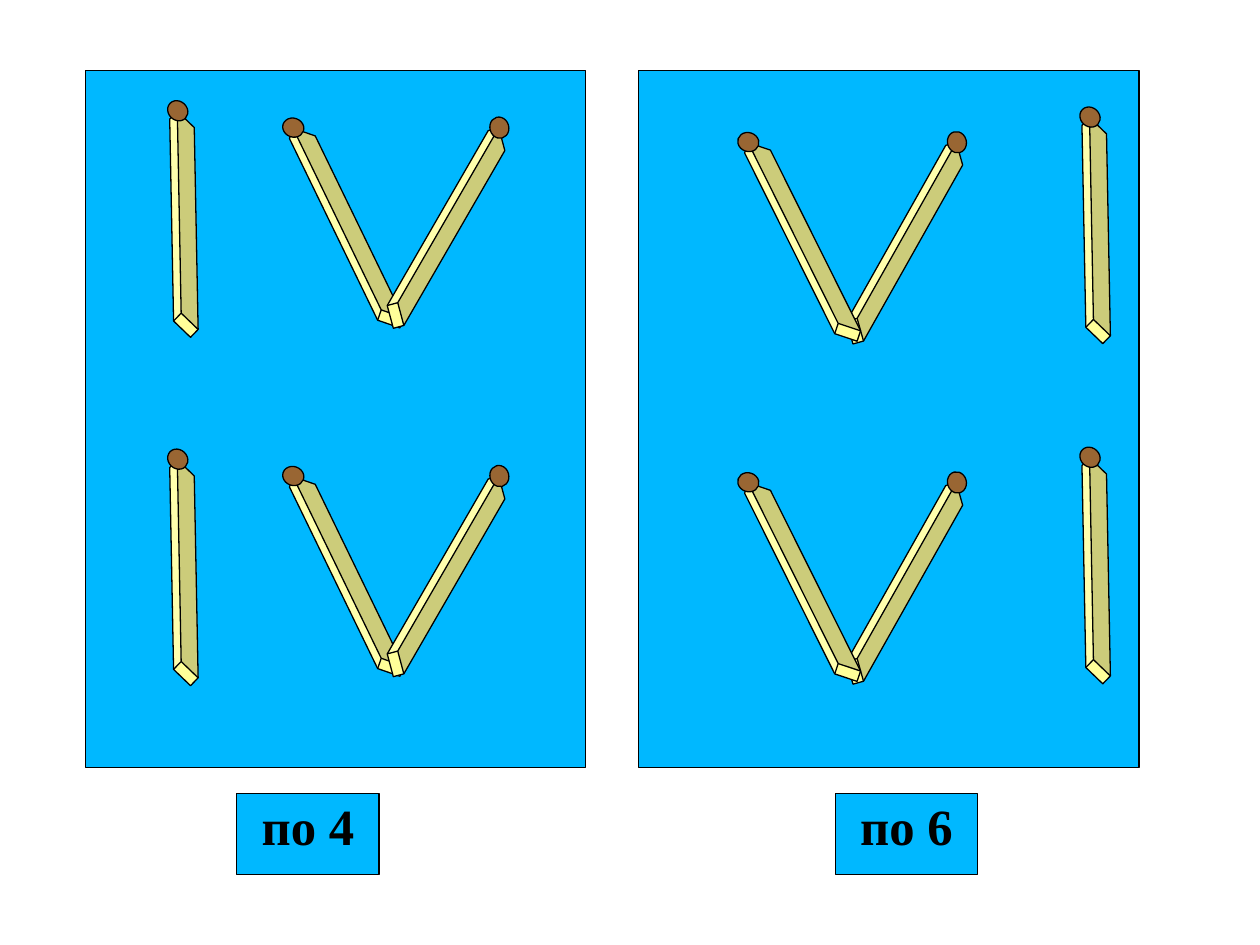
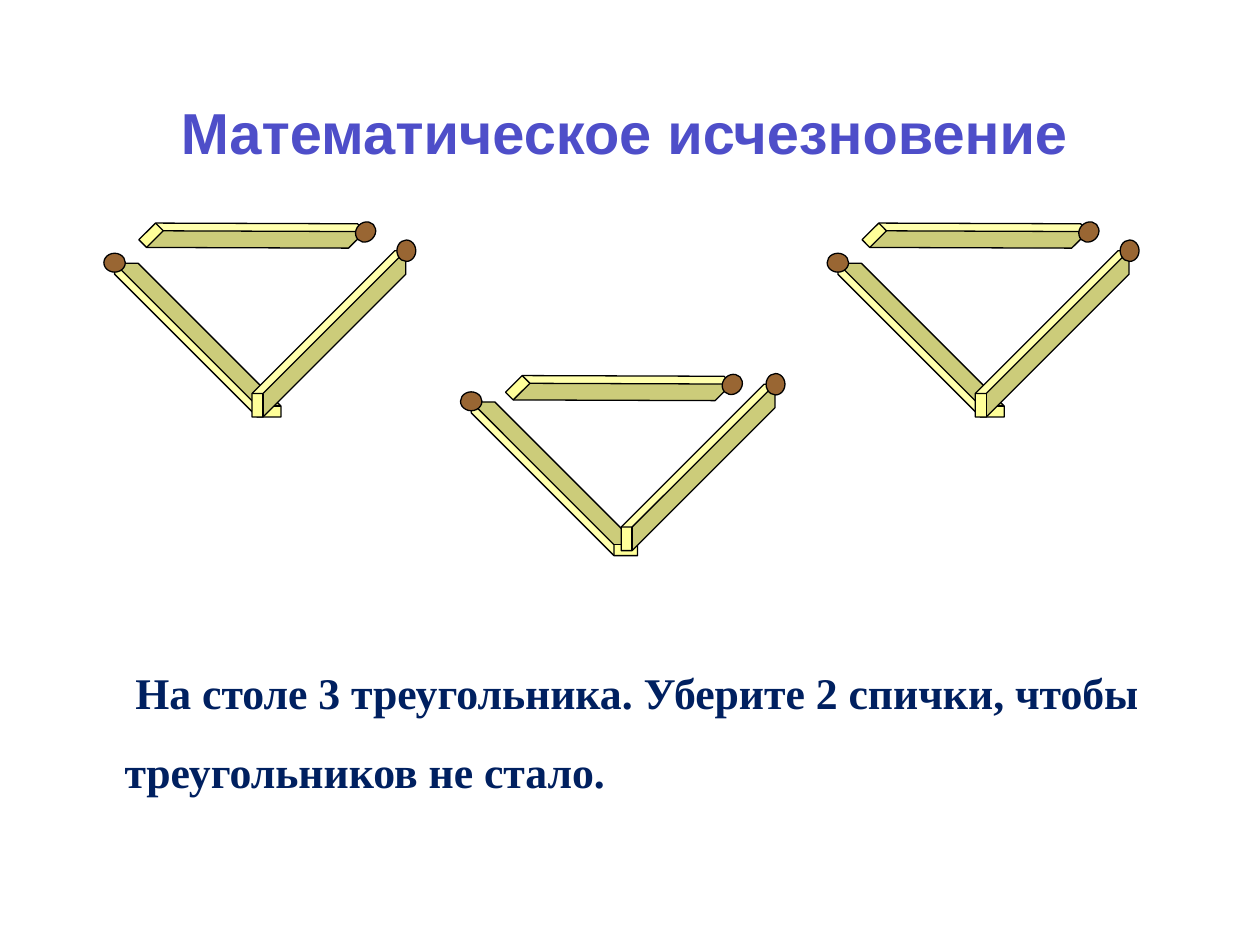
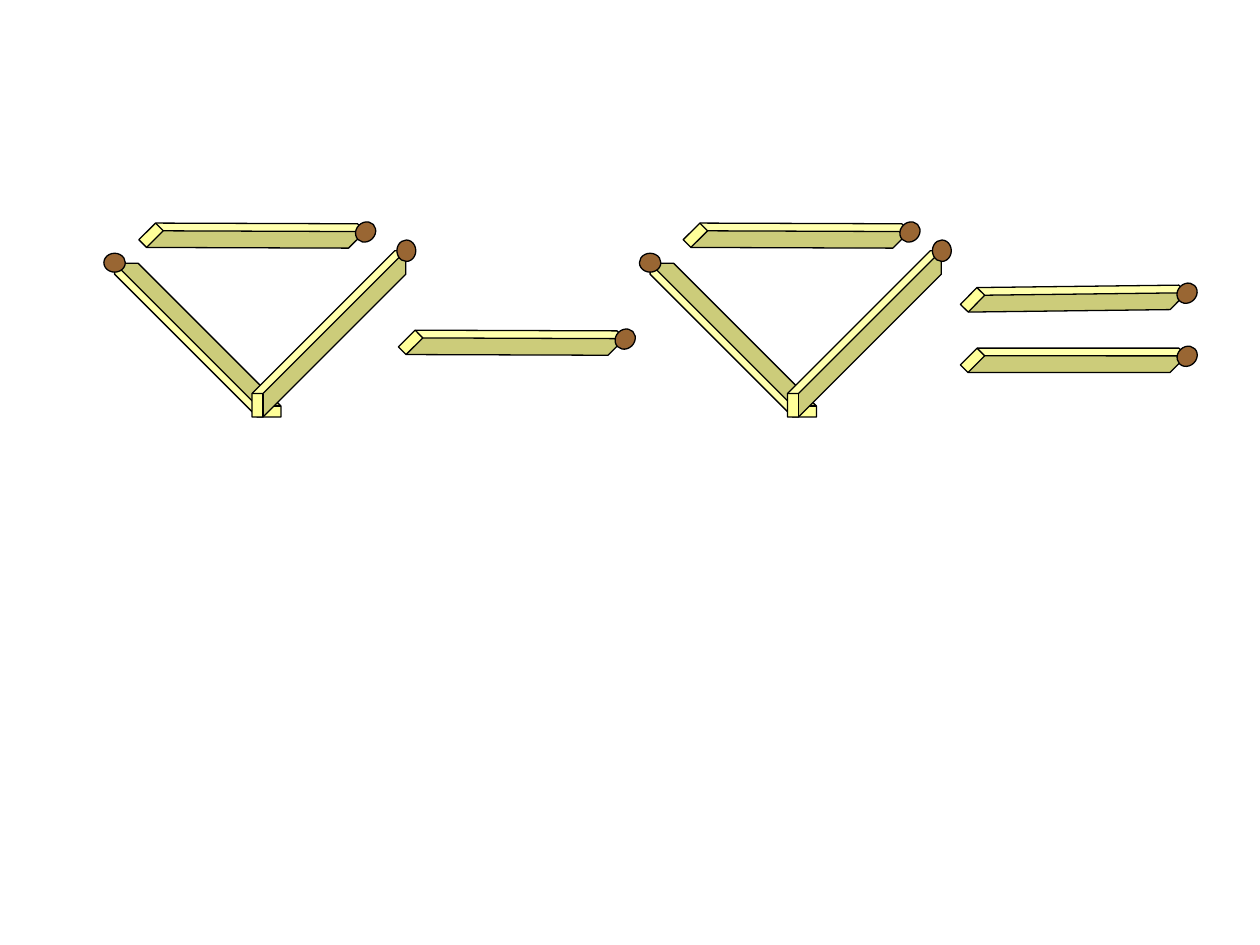
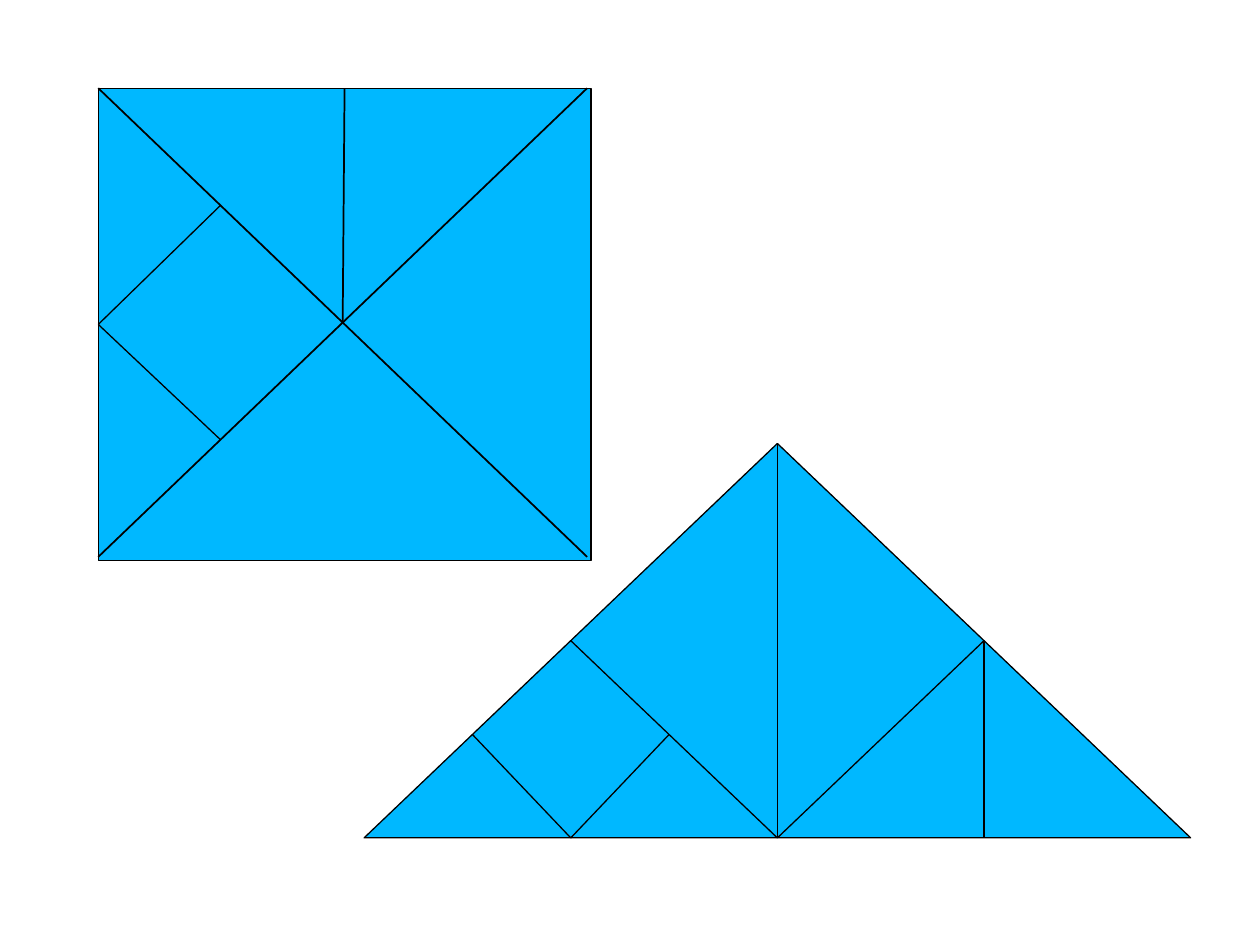
from math import cos, radians, sin

from lxml.etree import SubElement
from pptx import Presentation
from pptx.dml.color import RGBColor
from pptx.enum.shapes import MSO_CONNECTOR, MSO_SHAPE
from pptx.enum.text import MSO_ANCHOR, MSO_AUTO_SIZE, PP_ALIGN
from pptx.oxml import parse_xml
from pptx.oxml.ns import nsdecls, qn
from pptx.util import Inches, Pt

BLUE = "00B8FF"
BLACK = "000000"
WOOD = "FFFF99"
SULPHUR = "996633"
NAVY = "002060"
TITLE_STOPS = ((0, "5B5BCB"), (25, "4E4EC9"), (50, "2424B7"),
               (75, "4E4EC9"), (100, "5B5BCB"))

STICK_W, STICK_H = 1.22, 1.32
TIP_W, TIP_H = 0.15, 0.17
TIP_DX, TIP_DY = 0.615, -0.66

LEFT_FOUR = ((0.85, 1.12, 313.9), (2.14, 1.15, 289.1), (2.93, 1.15, 345))
RIGHT_SIX = ((8.09, 1.17, 313.9), (6.57, 1.27, 344.4), (5.76, 1.26, 288.5))
TOP_BAR = ((1.39, 1.21, 45.2),)
VEE = ((0.96, 2.04, 270), (2, 1.99, 0))


def color(value):
    return RGBColor.from_string(value)


def add_figure(shapes, kind, left, top, width, height, fill, rotation=0):
    figure = shapes.add_shape(kind, Inches(left), Inches(top),
                              Inches(width), Inches(height))
    figure.shadow.inherit = False
    figure.fill.solid()
    figure.fill.fore_color.rgb = color(fill)
    figure.line.color.rgb = color(BLACK)
    figure.line.width = Pt(0.75)
    figure.rotation = rotation
    return figure


def add_match(shapes, left, top, rotation):
    stick = add_figure(shapes, MSO_SHAPE.CUBE, left, top, STICK_W, STICK_H, WOOD, rotation)
    stick.adjustments[0] = 0.929
    turn = radians(rotation)
    tip_x = left + STICK_W / 2 + TIP_DX * cos(turn) - TIP_DY * sin(turn)
    tip_y = top + STICK_H / 2 + TIP_DX * sin(turn) + TIP_DY * cos(turn)
    add_figure(shapes, MSO_SHAPE.OVAL, tip_x - TIP_W / 2, tip_y - TIP_H / 2,
               TIP_W, TIP_H, SULPHUR, rotation)


def add_matches(slide, matches, dx=0, dy=0):
    group = slide.shapes.add_group_shape()
    for left, top, rotation in matches:
        add_match(group.shapes, left + dx, top + dy, rotation)


def add_cut(shapes, start, end, width=0.75):
    cut = shapes.add_connector(MSO_CONNECTOR.STRAIGHT, *map(Inches, start + end))
    cut.line.color.rgb = color(BLACK)
    cut.line.width = Pt(width)
    SubElement(cut._element.spPr, qn("a:effectLst"))
    return cut


def write(holder, text, size, font, fill=BLACK, stops=(), align=PP_ALIGN.LEFT,
          spacing=0.93, wrap=True, grow=False):
    frame = holder.text_frame
    frame.word_wrap = wrap
    frame.vertical_anchor = MSO_ANCHOR.TOP
    if grow:
        frame.auto_size = MSO_AUTO_SIZE.SHAPE_TO_FIT_TEXT
    paragraph = frame.paragraphs[0]
    paragraph.alignment = align
    paragraph.line_spacing = spacing
    run = paragraph.add_run()
    run.text = text
    run.font.size = Pt(size)
    run.font.name = font
    run.font.bold = True
    if stops:
        marks = "".join(f'<a:gs pos="{place * 1000}"><a:srgbClr val="{shade}"/></a:gs>'
                        for place, shade in stops)
        run._r.get_or_add_rPr().insert(0, parse_xml(
            f'<a:gradFill {nsdecls("a")}><a:gsLst>{marks}</a:gsLst>'
            '<a:lin ang="5400000" scaled="0"/></a:gradFill>'))
    else:
        run.font.color.rgb = color(fill)


def add_text(slide, left, top, width, height, text, **style):
    box = slide.shapes.add_textbox(Inches(left), Inches(top), Inches(width), Inches(height))
    write(box, text, grow=True, **style)


def build_number_cards(slide):
    cards = ((5.07, 6.63, "по 6", RIGHT_SIX, 2.7), (0.68, 1.88, "по 4", LEFT_FOUR, 2.765))
    for card_left, label_left, label, matches, row_gap in cards:
        add_figure(slide.shapes, MSO_SHAPE.RECTANGLE, card_left, 0.56, 3.97, 5.53, BLUE)
        for row in range(2):
            add_matches(slide, matches, dy=row * row_gap)
        tag = add_figure(slide.shapes, MSO_SHAPE.RECTANGLE, label_left, 6.3, 1.13, 0.64, BLUE)
        write(tag, label, size=29, font="Times New Roman", align=PP_ALIGN.CENTER)


def build_vanishing_puzzle(slide):
    for dx in (5.74, 0):
        add_matches(slide, TOP_BAR, dx)
        add_matches(slide, VEE, dx)
    add_matches(slide, TOP_BAR, 2.91, 1.21)
    add_matches(slide, ((3.79, 3.14, 270), (4.93, 3.05, 0)))
    add_text(slide, 1.31, 0.77, 7.29, 0.61, "Математическое исчезновение", size=33,
             font="Arial", stops=TITLE_STOPS, align=PP_ALIGN.CENTER, wrap=False)
    add_text(slide, 0.89, 5.03, 8.36, 1.35,
             " На столе 3 треугольника. Уберите 2 спички, чтобы треугольников не стало.",
             size=25, font="Times New Roman", fill=NAVY, spacing=1.5)


def build_vanishing_answer(slide):
    for bar_dx, vee_dx in ((4.32, 4.25), (0, 0)):
        add_matches(slide, TOP_BAR, bar_dx)
        add_matches(slide, VEE, vee_dx)
    for loose in ((3.45, 2.06, 45.2), (7.91, 2.2, 45), (7.91, 1.71, 44.3)):
        add_matches(slide, (loose,))


def build_tangram_square(slide):
    shapes = slide.shapes.add_group_shape().shapes
    left, top, right, bottom = 0.78, 0.7, 4.66, 4.42
    square = add_figure(shapes, MSO_SHAPE.RECTANGLE, left, top, 3.91, 3.75, BLUE)
    add_cut(shapes, (left, top), (right, bottom), 1)
    add_cut(shapes, (left, bottom), (right, top), 1)
    add_cut(shapes, (2.73, top), (2.72, 2.56), 1).begin_connect(square, 0)
    for end_y in (3.49, 1.63):
        add_cut(shapes, (left, 2.58), (1.75, end_y)).begin_connect(square, 1)


def build_tangram_triangle(slide):
    shapes = slide.shapes.add_group_shape().shapes
    left, top, width, height = 2.89, 3.52, 6.56, 3.13
    add_figure(shapes, MSO_SHAPE.ISOSCELES_TRIANGLE, left, top, width, height, BLUE)
    quarter, middle, three_quarters = (left + width * part / 4 for part in (1, 2, 3))
    base, half_height = top + height, top + height / 2
    cuts = (((middle, top), (middle, base)),
            ((middle, base), (quarter, half_height)),
            ((middle, base), (three_quarters, half_height)),
            ((three_quarters, half_height), (three_quarters, base)),
            ((3.75, 5.83), (quarter, base)),
            ((quarter, base), (5.31, 5.83)))
    for start, end in cuts:
        add_cut(shapes, start, end)


def build_tangram(slide):
    build_tangram_square(slide)
    build_tangram_triangle(slide)


def main():
    deck = Presentation()
    deck.slide_width = Inches(10)
    deck.slide_height = Inches(7.5)
    for build in (build_number_cards, build_vanishing_puzzle,
                  build_vanishing_answer, build_tangram):
        build(deck.slides.add_slide(deck.slide_layouts[6]))
    deck.save("out.pptx")


if __name__ == "__main__":
    main()
